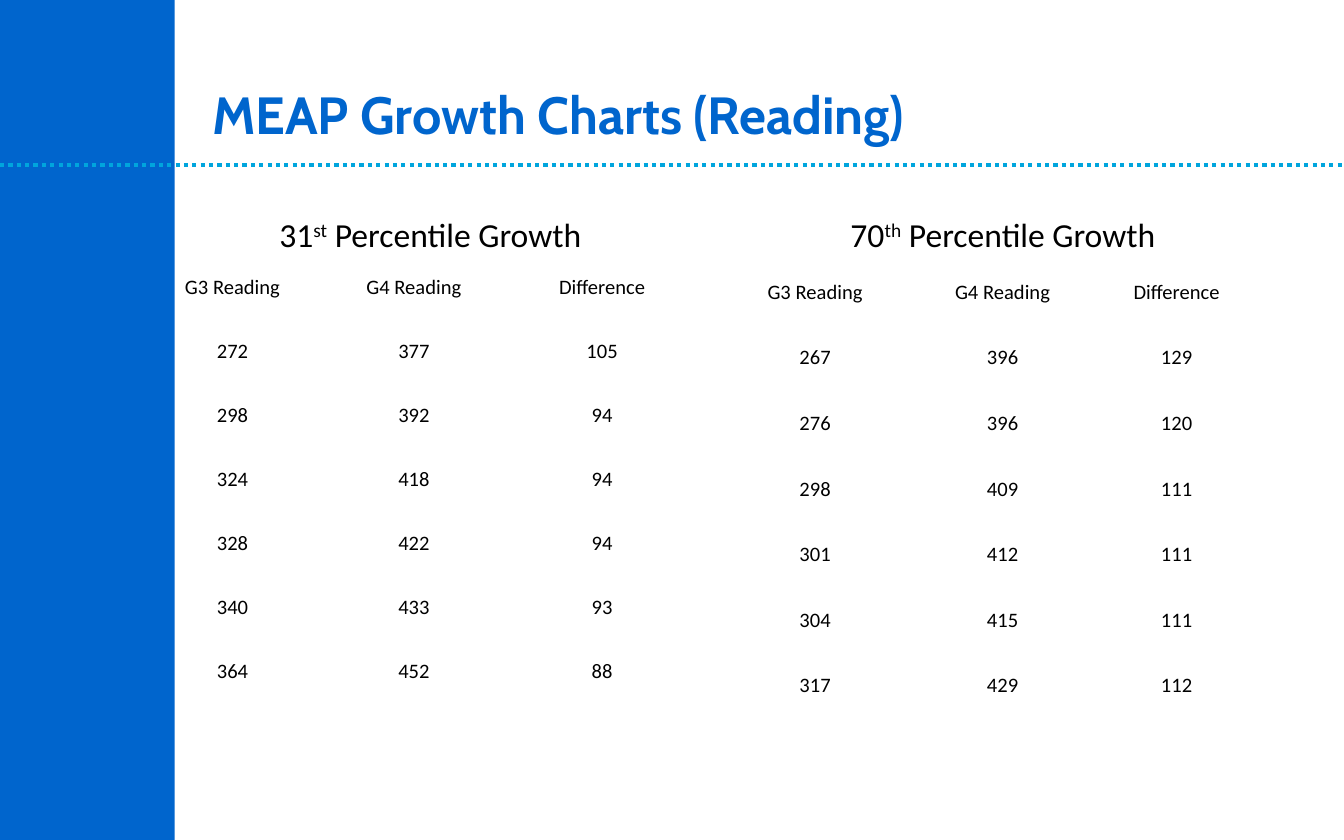
from lxml import etree
from pptx import Presentation
from pptx.dml.color import RGBColor
from pptx.enum.dml import MSO_LINE
from pptx.enum.shapes import MSO_CONNECTOR, MSO_SHAPE
from pptx.enum.text import MSO_ANCHOR, PP_ALIGN
from pptx.oxml.ns import qn
from pptx.util import Inches, Pt

STRAIGHT = MSO_CONNECTOR.STRAIGHT
RECTANGLE = MSO_SHAPE.RECTANGLE
ROUND_DOT = MSO_LINE.ROUND_DOT
LEFT, CENTER = PP_ALIGN.LEFT, PP_ALIGN.CENTER
MIDDLE, BOTTOM = MSO_ANCHOR.MIDDLE, MSO_ANCHOR.BOTTOM

COLORS = {"blue": "0065CD", "cyan": "00A5DD", "black": "000000"}
NO_STYLE_NO_GRID = "{2D5ABB26-0587-4C30-8999-92F81FD0307C}"
TITLE_ONLY = 5
HEADERS = ("G3 Reading", "G4 Reading", "Difference")
GROWTH_31 = [(272, 377), (298, 392), (324, 418), (328, 422), (340, 433), (364, 452)]
GROWTH_70 = [(267, 396), (276, 396), (298, 409), (301, 412), (304, 415), (317, 429)]


def color(name):
    return RGBColor.from_string(COLORS[name])


def add_run(paragraph, text, size, font="Calibri", tint="black", bold=False):
    run = paragraph.add_run()
    run.text = text
    run.font.size = Pt(size)
    run.font.name = font
    run.font.bold = bold
    run.font.color.rgb = color(tint)
    return run


def add_sidebar(slide, width, height):
    sidebar = slide.shapes.add_shape(RECTANGLE, 0, 0, width, height)
    sidebar.shadow.inherit = False
    sidebar.fill.solid()
    sidebar.fill.fore_color.rgb = color("blue")
    sidebar.line.fill.background()


def add_dotted_rule(slide, y, width):
    rule = slide.shapes.add_connector(STRAIGHT, 0, y, width, y)
    rule.line.color.rgb = color("cyan")
    rule.line.width = Pt(2.25)
    rule.line.dash_style = ROUND_DOT
    etree.SubElement(rule._element.spPr, qn("a:effectLst"))


def set_title(slide, text):
    title = slide.shapes.title
    title.left, title.top = Inches(1.48), Inches(0.56)
    title.width, title.height = Inches(8.52), Inches(0.57)
    title.text_frame.vertical_anchor = MIDDLE
    paragraph = title.text_frame.paragraphs[0]
    paragraph.alignment = LEFT
    add_run(paragraph, text, 28, "Cabin", "blue", True)


def add_percentile_heading(slide, left, number, ordinal):
    heading = slide.shapes.add_textbox(left, Inches(1.54), Inches(2.53), Inches(0.4))
    heading.text_frame.word_wrap = True
    paragraph = heading.text_frame.paragraphs[0]
    add_run(paragraph, number, 18)
    suffix = add_run(paragraph, ordinal, 18)
    suffix._r.get_or_add_rPr().set("baseline", "30000")
    add_run(paragraph, " Percentile Growth", 18)


def fill_cell(cell, text):
    cell.fill.background()
    cell.vertical_anchor = BOTTOM
    cell.margin_left = cell.margin_right = cell.margin_top = Inches(0.01)
    cell.margin_bottom = 0
    paragraph = cell.text_frame.paragraphs[0]
    paragraph.alignment = CENTER
    add_run(paragraph, text, 11)


def add_growth_table(slide, left, top, height, widths, scores):
    rows = [HEADERS] + [(g3, g4, g4 - g3) for g3, g4 in scores]
    frame = slide.shapes.add_table(
        len(rows), len(HEADERS), left, top, Inches(sum(widths)), height)
    table = frame.table
    table.first_row = table.horz_banding = False
    table._tbl.tblPr.find(qn("a:tableStyleId")).text = NO_STYLE_NO_GRID
    for column, width in zip(table.columns, widths):
        column.width = Inches(width)
    for r, values in enumerate(rows):
        for c, value in enumerate(values):
            fill_cell(table.cell(r, c), str(value))


def main():
    deck = Presentation()
    deck.slide_width, deck.slide_height = Inches(10), Inches(6.25)
    slide = deck.slides.add_slide(deck.slide_layouts[TITLE_ONLY])
    add_sidebar(slide, Inches(1.3), deck.slide_height)
    add_dotted_rule(slide, Inches(1.23), deck.slide_width)
    set_title(slide, "MEAP Growth Charts (Reading)")
    add_percentile_heading(slide, Inches(1.98), "31", "st")
    add_percentile_heading(slide, Inches(6.23), "70", "th")
    add_growth_table(slide, Inches(1.09), Inches(1.76), Inches(3.33),
                     (1.28, 1.42, 1.38), GROWTH_31)
    add_growth_table(slide, Inches(5.32), Inches(1.78), Inches(3.42),
                     (1.49, 1.3, 1.29), GROWTH_70)
    deck.save("out.pptx")


if __name__ == "__main__":
    main()
